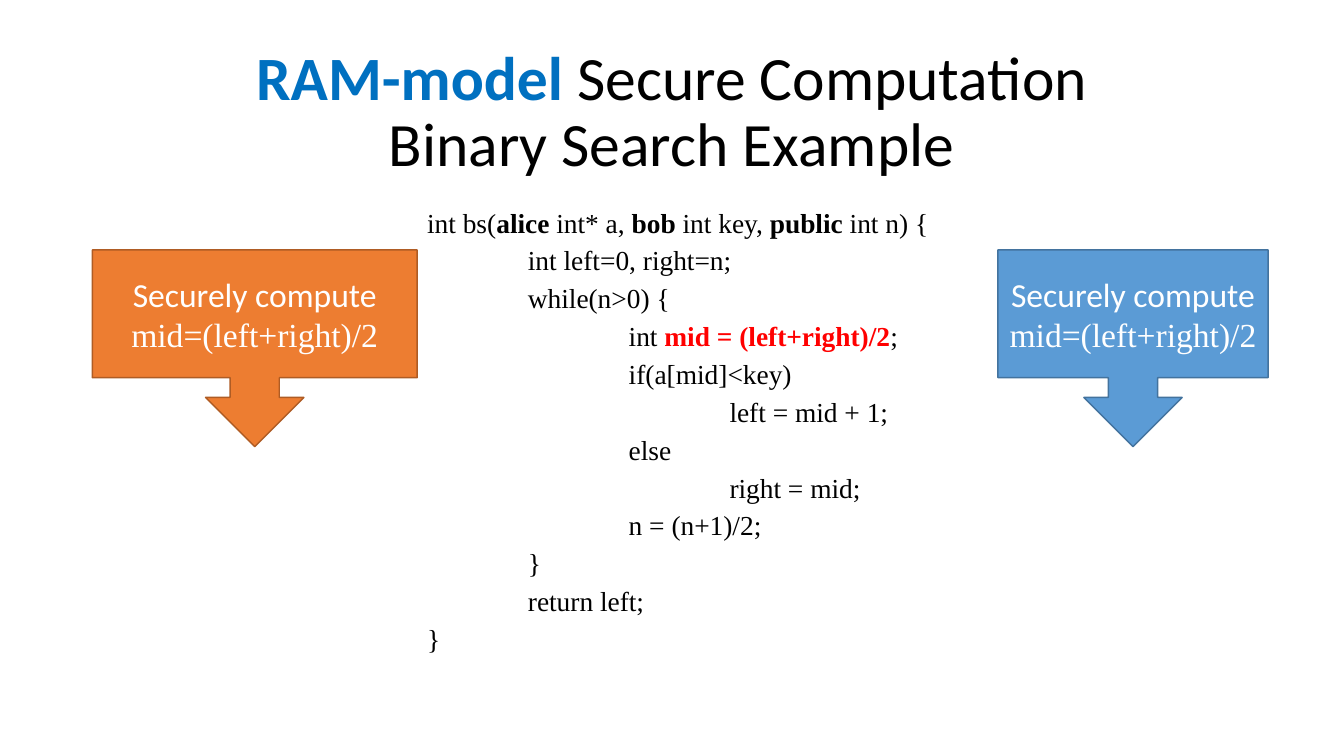
from dataclasses import dataclass

from pptx import Presentation
from pptx.dml.color import RGBColor
from pptx.enum import shapes, text
from pptx.util import Pt


@dataclass(frozen=True)
class Theme:
    black: str = "000000"
    white: str = "FFFFFF"
    accent: str = "0070C0"
    highlight: str = "FF0000"
    orange: str = "ED7D31"
    orange_edge: str = "AF5C24"
    blue: str = "5B9BD5"
    blue_edge: str = "43739E"
    sans: str = "Calibri"
    serif: str = "Times New Roman"
    title_size: float = 44
    code_size: float = 19.6
    callout_size: float = 24


THEME = Theme()


@dataclass(frozen=True)
class Span:
    words: str
    bold: bool = False
    color: str = THEME.black


@dataclass(frozen=True)
class CodeLine:
    depth: int
    spans: tuple[Span, ...]


@dataclass(frozen=True)
class Callout:
    left: float
    width: float
    fill: str
    edge: str


INDENT = 72
CALLOUT_TOP, CALLOUT_HEIGHT = 178.5, 140.5

TITLE = (
    Span("RAM-model", True, THEME.accent),
    Span(" Secure Computation"),
    Span("\n"),
    Span("Binary Search Example"),
)

CODE = (
    CodeLine(0, (Span("int bs("), Span("alice ", True), Span("int* a, "), Span("bob ", True),
                 Span("int key, "), Span("public ", True), Span("int n) {"))),
    CodeLine(1, (Span("int left=0, right=n;"),)),
    CodeLine(1, (Span("while(n>0) {"),)),
    CodeLine(2, (Span("int "), Span("mid = (left+right)/2", True, THEME.highlight), Span(";"))),
    CodeLine(2, (Span("if(a[mid]<key)"),)),
    CodeLine(3, (Span("left = mid + 1;"),)),
    CodeLine(2, (Span("else"),)),
    CodeLine(3, (Span("right = mid;"),)),
    CodeLine(2, (Span("n = (n+1)/2;"),)),
    CodeLine(1, (Span("}"),)),
    CodeLine(1, (Span("return left;"),)),
    CodeLine(0, (Span("}"),)),
)

CALLOUTS = (
    Callout(66, 232, THEME.orange, THEME.orange_edge),
    Callout(712.8, 193, THEME.blue, THEME.blue_edge),
)


def write(frame, spans: tuple[Span, ...], *, font: str, size: float, first: bool = True,
          align=text.PP_ALIGN.LEFT, spacing: float = 1.0, before: float = 0,
          indent: float = 0) -> None:
    """Write one paragraph of formatted spans into a text frame."""
    line = frame.paragraphs[0] if first else frame.add_paragraph()
    line.alignment = align
    line.line_spacing = spacing
    line.space_before = Pt(before)
    if indent:
        line._p.get_or_add_pPr().set("marL", str(Pt(indent)))
    for span in spans:
        if span.words == "\n":
            line.add_line_break()
            continue
        run = line.add_run()
        run.text = span.words
        run.font.name = font
        run.font.size = Pt(size)
        run.font.bold = span.bold
        run.font.color.rgb = RGBColor.from_string(span.color)


def add_frame(slide, left: float, top: float, width: float, height: float, anchor):
    frame = slide.shapes.add_textbox(Pt(left), Pt(top), Pt(width), Pt(height)).text_frame
    frame.word_wrap = True
    frame.vertical_anchor = anchor
    return frame


def add_callout(slide, callout: Callout) -> None:
    box = slide.shapes.add_shape(
        shapes.MSO_SHAPE.DOWN_ARROW_CALLOUT, Pt(callout.left), Pt(CALLOUT_TOP),
        Pt(callout.width), Pt(CALLOUT_HEIGHT))
    box.shadow.inherit = False
    box.fill.solid()
    box.fill.fore_color.rgb = RGBColor.from_string(callout.fill)
    box.line.color.rgb = RGBColor.from_string(callout.edge)
    box.line.width = Pt(1)
    box.text_frame.word_wrap = True
    box.text_frame.vertical_anchor = text.MSO_ANCHOR.MIDDLE
    lines = (("Securely compute", THEME.sans), ("mid=(left+right)/2", THEME.serif))
    for index, (words, font) in enumerate(lines):
        write(box.text_frame, (Span(words, color=THEME.white),), font=font,
              size=THEME.callout_size, first=index == 0, align=text.PP_ALIGN.CENTER)


def main() -> None:
    deck = Presentation()
    deck.slide_width, deck.slide_height = Pt(960), Pt(540)
    slide = deck.slides.add_slide(deck.slide_layouts[6])

    # Title
    heading = add_frame(slide, 66, 28.8, 828, 104.4, text.MSO_ANCHOR.MIDDLE)
    write(heading, TITLE, font=THEME.sans, size=THEME.title_size,
          align=text.PP_ALIGN.CENTER, spacing=0.9)

    # Binary search listing
    listing = add_frame(slide, 298, 149.8, 414.8, 342.7, text.MSO_ANCHOR.TOP)
    for index, code in enumerate(CODE):
        write(listing, code.spans, font=THEME.serif, size=THEME.code_size, first=index == 0,
              spacing=0.7, before=10.6, indent=code.depth * INDENT)

    # Callouts for the two parties
    for callout in CALLOUTS:
        add_callout(slide, callout)

    deck.save("out.pptx")


if __name__ == "__main__":
    main()
